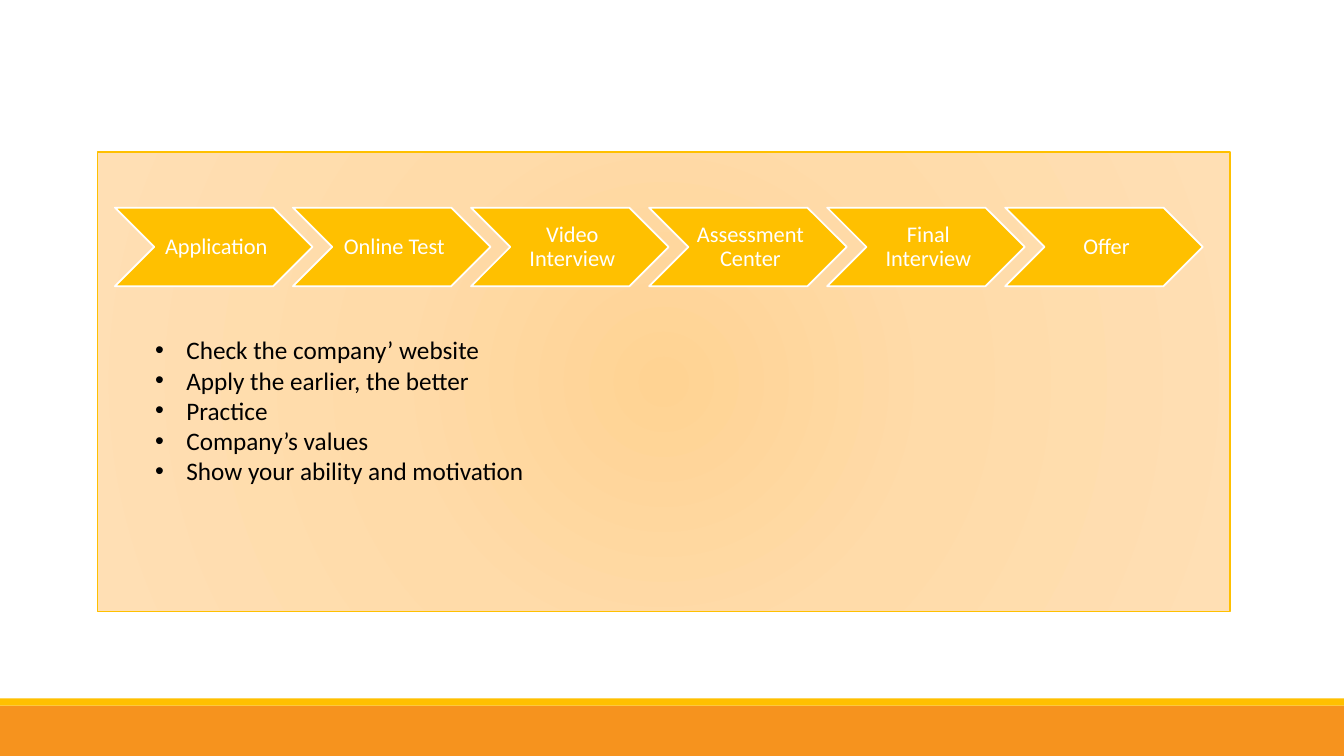
from dataclasses import dataclass

from lxml import etree
from pptx import Presentation
from pptx.dml.color import RGBColor
from pptx.enum.shapes import MSO_SHAPE
from pptx.enum.text import MSO_ANCHOR, PP_ALIGN
from pptx.oxml import parse_xml
from pptx.oxml.ns import qn
from pptx.util import Inches, Pt

RECTANGLE = MSO_SHAPE.RECTANGLE
CHEVRON = MSO_SHAPE.CHEVRON
MIDDLE = MSO_ANCHOR.MIDDLE
TOP = MSO_ANCHOR.TOP
CENTER = PP_ALIGN.CENTER
LEFT = PP_ALIGN.LEFT
DRAWING_NS = "http://schemas.openxmlformats.org/drawingml/2006/main"


@dataclass(frozen=True)
class Theme:
    font: str = "Calibri"
    orange: str = "F6931E"
    gold: str = "FFC000"
    white: str = "FFFFFF"
    black: str = "000000"
    panel_stops: tuple = ((0, "FFD393"), (45, "FFDBA9"), (100, "FFDFB4"))
    step_size: int = 16
    tip_size: int = 18


THEME = Theme()
STEPS = ["Application", "Online Test", "Video Interview",
         "Assessment Center", "Final Interview", "Offer"]
TIPS = ["Check the company’ website", "Apply the earlier, the better",
        "Practice", "Company’s values", "Show your ability and motivation"]


def add_block(slide, preset, left, top, width, height, fill=None, line=None, line_width=1):
    block = slide.shapes.add_shape(
        preset, Inches(left), Inches(top), Inches(width), Inches(height))
    block.shadow.inherit = False
    if fill:
        block.fill.solid()
        block.fill.fore_color.rgb = RGBColor.from_string(fill)
    if line:
        block.line.color.rgb = RGBColor.from_string(line)
        block.line.width = Pt(line_width)
    else:
        block.line.fill.background()
    return block


def set_radial_fill(block, stops):
    marks = "".join(
        f'<a:gs pos="{position * 1000}"><a:srgbClr val="{color}"/></a:gs>'
        for position, color in stops)
    gradient = parse_xml(
        f'<a:gradFill xmlns:a="{DRAWING_NS}" rotWithShape="1"><a:gsLst>{marks}</a:gsLst>'
        '<a:path path="circle">'
        '<a:fillToRect l="100000" t="100000" r="100000" b="100000"/>'
        '</a:path></a:gradFill>')
    block.element.spPr.find(qn("a:prstGeom")).addnext(gradient)


def style_paragraph(para, size, color, alignment):
    para.alignment = alignment
    for span in para.runs:
        span.font.name = THEME.font
        span.font.size = Pt(size)
        span.font.color.rgb = RGBColor.from_string(color)


def add_step(slide, label, left):
    step = add_block(slide, CHEVRON, left, 2.06, 1.96, 0.78, THEME.gold, THEME.white, 1.25)
    frame = step.text_frame
    frame.word_wrap = True
    frame.vertical_anchor = MIDDLE
    frame.margin_left = Inches(0.07)
    frame.margin_top = frame.margin_right = frame.margin_bottom = Inches(0.02)
    frame.text = label
    para = frame.paragraphs[0]
    para.line_spacing = 0.9
    style_paragraph(para, THEME.step_size, THEME.white, CENTER)


def add_bullet(para):
    properties = para._p.get_or_add_pPr()
    properties.set("marL", str(Inches(0.31)))
    properties.set("indent", str(-Inches(0.31)))
    etree.SubElement(properties, qn("a:buFont")).set("typeface", "Arial")
    etree.SubElement(properties, qn("a:buChar")).set("char", "•")


def add_bullet_list(slide, items, left, top, width, height):
    box = slide.shapes.add_textbox(Inches(left), Inches(top), Inches(width), Inches(height))
    frame = box.text_frame
    frame.word_wrap = True
    frame.vertical_anchor = TOP
    frame.text = "\n".join(items)
    for para in frame.paragraphs:
        add_bullet(para)
        style_paragraph(para, THEME.tip_size, THEME.black, LEFT)


def main():
    deck = Presentation()
    deck.slide_width = Inches(13.33)
    deck.slide_height = Inches(7.5)
    page = deck.slides.add_slide(deck.slide_layouts[6])

    add_block(page, RECTANGLE, 0, 7, 13.33, 0.5, THEME.orange)
    add_block(page, RECTANGLE, 0, 6.93, 13.33, 0.07, THEME.gold)
    panel = add_block(page, RECTANGLE, 0.97, 1.51, 11.23, 4.56, line=THEME.gold)
    set_radial_fill(panel, THEME.panel_stops)

    step_pitch = (9.97 - 1.14) / (len(STEPS) - 1)
    for index, label in enumerate(STEPS):
        add_step(page, label, 1.14 + index * step_pitch)
    add_bullet_list(page, TIPS, 1.44, 3.27, 4.99, 1.62)

    deck.save("out.pptx")


if __name__ == "__main__":
    main()
